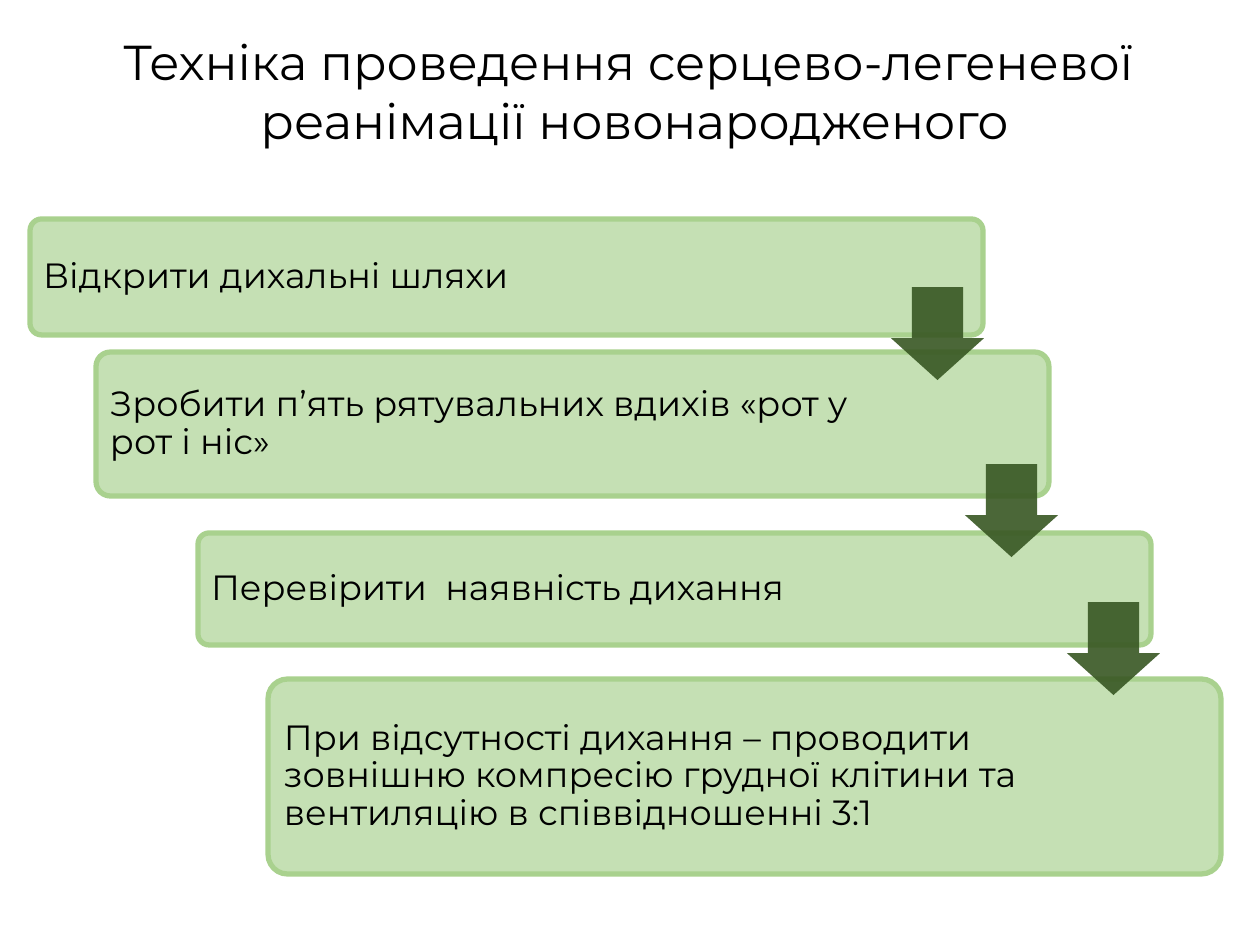
from lxml import etree
from pptx import Presentation
from pptx.dml.color import RGBColor
from pptx.enum.shapes import MSO_SHAPE as Shape
from pptx.enum.text import MSO_ANCHOR as Anchor, MSO_AUTO_SIZE as AutoSize, PP_ALIGN as Align
from pptx.oxml.ns import qn
from pptx.util import Emu, Pt

PX_PER_INCH = 126


def px(value):
    return Emu(round(value * 914400 / PX_PER_INCH))


def rgb(hex_color):
    return RGBColor.from_string(hex_color)


class Deck:
    font = "Montserrat"
    ink = "000000"
    step_fill = "C5E0B4"
    step_line = "A9D18E"
    arrow_fill = "385723"

    def __init__(self, width, height):
        self.prs = Presentation()
        self.prs.slide_width, self.prs.slide_height = px(width), px(height)
        self.slide = self.prs.slides.add_slide(self.prs.slide_layouts[6])

    def text(self, box, content, size, align=Align.LEFT, spacing=None):
        frame = self.slide.shapes.add_textbox(*map(px, box)).text_frame
        frame.text = content
        for paragraph in frame.paragraphs:
            paragraph.alignment = align
            paragraph.line_spacing = spacing
            for run in paragraph.runs:
                run.font.name = self.font
                run.font.size = Pt(size)
                run.font.color.rgb = rgb(self.ink)
        return frame

    def title(self, box, content):
        frame = self.text(box, content, 28, Align.CENTER)
        frame.word_wrap = False
        frame.auto_size = AutoSize.SHAPE_TO_FIT_TEXT

    def shape(self, kind, box, fill, *adjustments):
        shape = self.slide.shapes.add_shape(kind, *map(px, box))
        shape.shadow.inherit = False
        shape.fill.solid()
        shape.fill.fore_color.rgb = rgb(fill)
        for index, value in enumerate(adjustments):
            shape.adjustments[index] = value
        return shape

    def step(self, left, top, width, height, text_width, content):
        panel = self.shape(Shape.ROUNDED_RECTANGLE, (left, top, width, height),
                           self.step_fill, 0.1)
        panel.line.color.rgb = rgb(self.step_line)
        panel.line.width = Pt(3)

        # The label clears the rounded corners, so its inset follows the height
        inset = round(height * 0.03)
        label = self.text((left + inset, top + inset, text_width, height - 2 * inset),
                          content, 20, spacing=0.9)
        label.word_wrap = True
        label.vertical_anchor = Anchor.MIDDLE
        label.margin_left = label.margin_right = px(10)
        label.margin_top = label.margin_bottom = px(10)

    def arrow(self, left, top, size):
        arrow = self.shape(Shape.DOWN_ARROW, (left, top, size, size),
                           self.arrow_fill, 0.55, 0.45)
        arrow.line.fill.background()
        color = arrow.fill._xPr.find(qn("a:solidFill"))[0]
        etree.SubElement(color, qn("a:alpha")).set("val", "90000")


def main():
    deck = Deck(1260, 945)

    # Heading
    deck.title((63, 25, 1143, 131),
               "Техніка проведення серцево-легеневої \nреанімації новонародженого")

    # Staircase of steps: left, top, height, text width, wording
    steps = [
        (30, 219, 116, 786, "Відкрити дихальні шляхи"),
        (96, 352, 144, 771, "Зробити п’ять рятувальних вдихів «рот у рот і ніс»"),
        (198, 533, 112, 774, "Перевірити  наявність дихання"),
        (268, 679, 195, 767, "При відсутності дихання – проводити зовнішню компресію "
                             "грудної клітини та вентиляцію в співвідношенні 3:1"),
    ]
    for left, top, height, text_width, content in steps:
        deck.step(left, top, 953, height, text_width, content)

    # Arrows leading from each step to the next
    for left, top in [(891, 287), (965, 464), (1067, 602)]:
        deck.arrow(left, top, 93)

    deck.prs.save("out.pptx")


if __name__ == "__main__":
    main()
